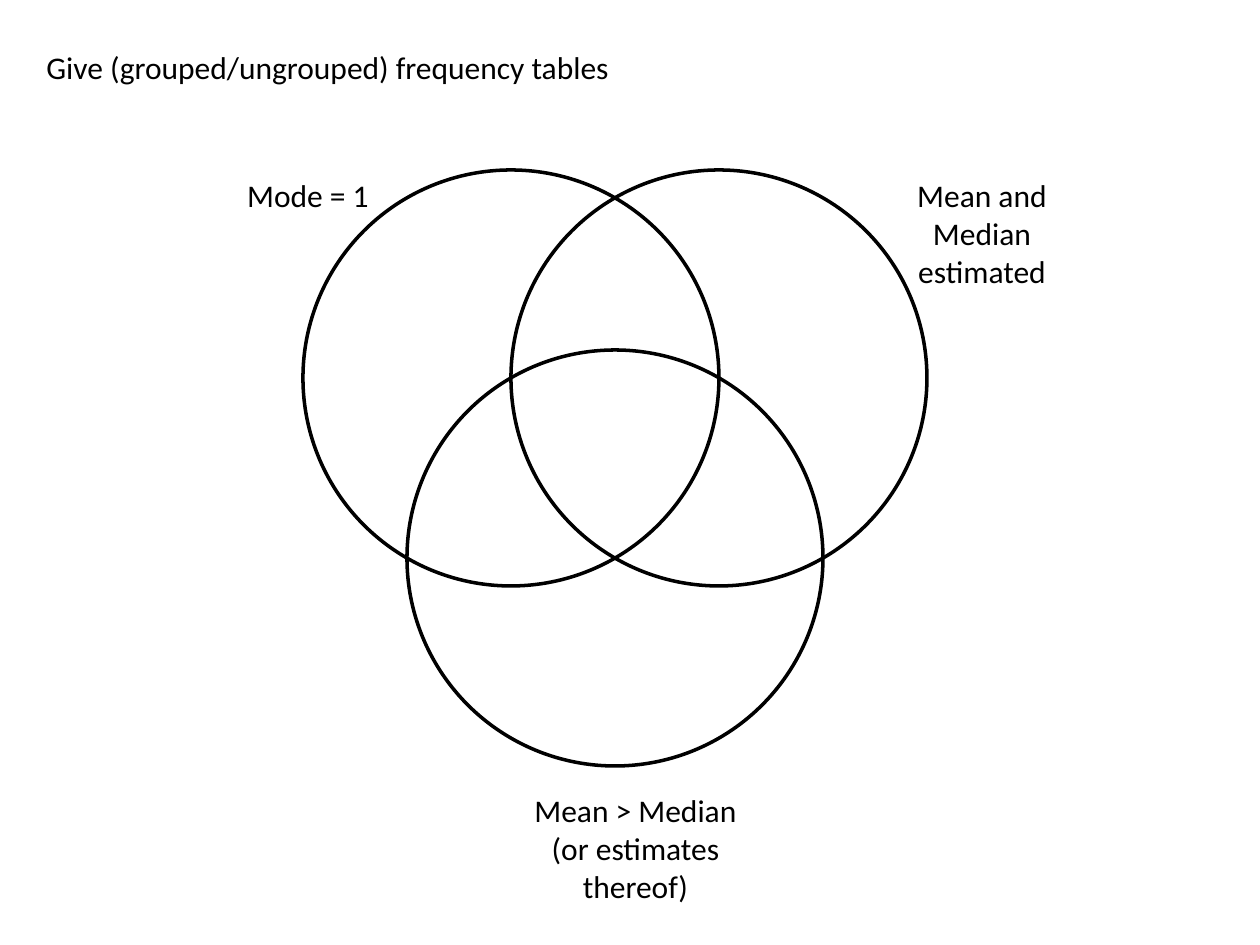
import math

import pptx
import pptx.util
from pptx.dml.color import RGBColor
from pptx.enum.shapes import MSO_SHAPE
from pptx.enum.text import MSO_AUTO_SIZE, PP_ALIGN

BLACK = RGBColor(0, 0, 0)
FONT = "Calibri"
PX_PER_INCH = 126
RADIUS = 208


def px(n):
    return pptx.util.Emu(round(n * 914400 / PX_PER_INCH))


def add_text(s, text, x, y, w, h, align=PP_ALIGN.CENTER, wrap=True, size=18):
    tf = s.shapes.add_textbox(px(x), px(y), px(w), px(h)).text_frame
    tf.word_wrap = wrap
    tf.auto_size = MSO_AUTO_SIZE.SHAPE_TO_FIT_TEXT
    p = tf.paragraphs[0]
    p.alignment = align
    r = p.add_run()
    r.text = text
    r.font.name = FONT
    r.font.size = pptx.util.Pt(size)
    r.font.color.rgb = BLACK


def add_circle(group, x, y):
    sp = group.shapes.add_shape(
        MSO_SHAPE.OVAL, px(x), px(y), px(2 * RADIUS), px(2 * RADIUS))
    sp.shadow.inherit = False
    sp.fill.background()
    sp.line.color.rgb = BLACK
    sp.line.width = pptx.util.Pt(2)


def add_venn(s, x, y):
    group = s.shapes.add_group_shape()
    drop = round(RADIUS * math.sqrt(3) / 2)
    for dx, dy in ((0, 0), (RADIUS, 0), (RADIUS // 2, drop)):
        add_circle(group, x + dx, y + dy)


def main():
    prs = pptx.Presentation()
    prs.slide_width, prs.slide_height = px(1260), px(945)
    s = prs.slides.add_slide(prs.slide_layouts[6])
    add_venn(s, 303, 170)
    add_text(s, "Mode = 1", 209, 170, 198, 50)
    add_text(s, "Mean and Median estimated", 883, 170, 198, 127)
    add_text(s, "Mean > Median (or estimates thereof)", 511, 785, 249, 127)
    add_text(s, "Give (grouped/ungrouped) frequency tables", 34, 42, 596, 50,
             align=PP_ALIGN.LEFT, wrap=False)
    prs.save("out.pptx")


if __name__ == "__main__":
    main()
